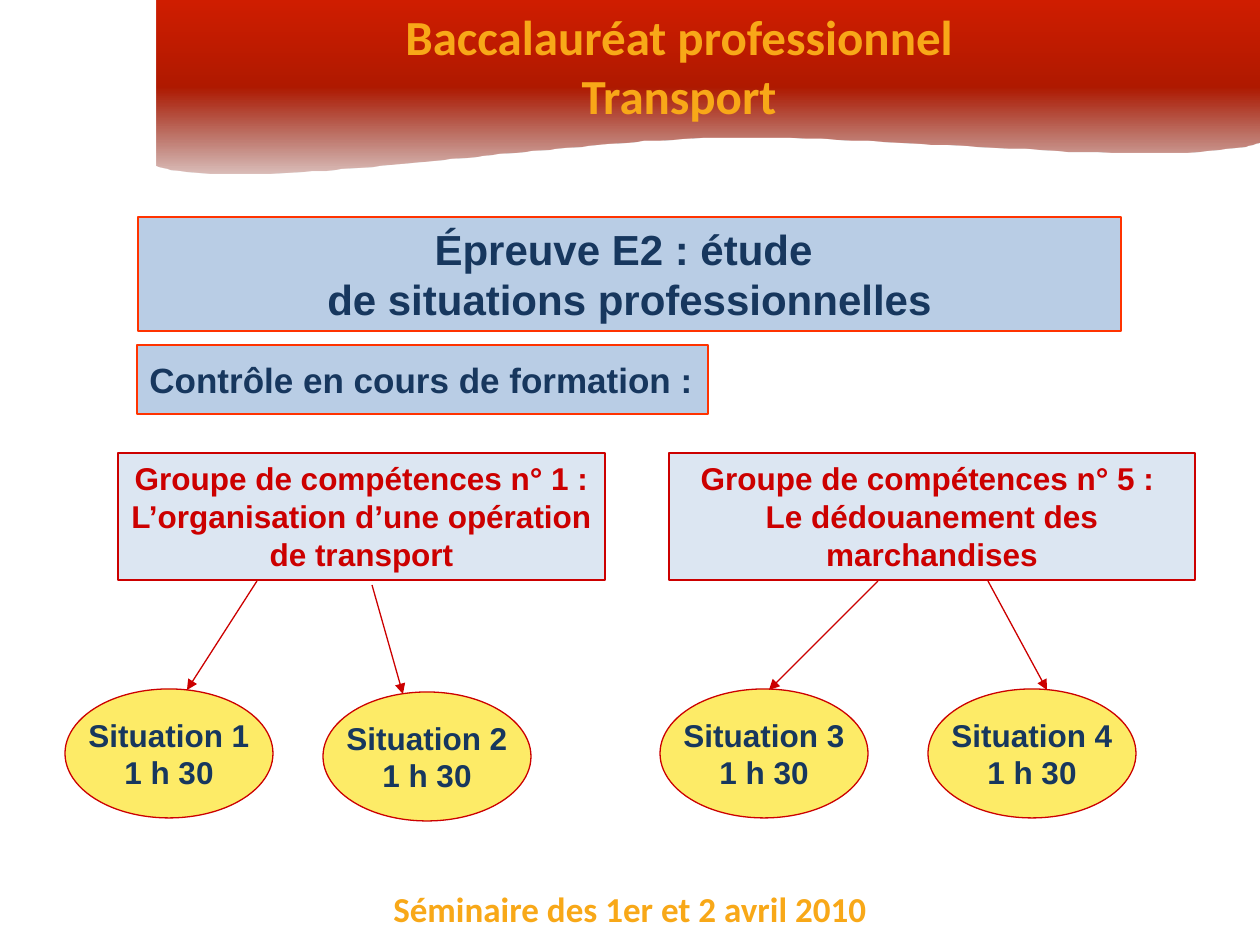
from lxml import etree
from pptx import Presentation
from pptx import util as u
from pptx.dml.color import RGBColor
from pptx.enum import shapes, text
from pptx.oxml import parse_xml
from pptx.oxml.ns import nsdecls, qn

PX = 914400 / 126
COLORS = {
    "orange": "F8A818", "navy": "17375E", "red": "CC0000", "vermilion": "FF3300",
    "blue": "B9CDE5", "pale_blue": "DCE6F2", "yellow": "FDEB67",
}


def px(*lengths):
    return [u.Emu(round(length * PX)) for length in lengths]


def write(shape, lines, size, color, font="Arial", align="CENTER", anchor="MIDDLE", wrap=False):
    frame = shape.text_frame
    frame.text = "\n".join(lines)
    frame_format = {
        "auto_size": text.MSO_AUTO_SIZE.NONE, "word_wrap": wrap,
        "vertical_anchor": text.MSO_ANCHOR[anchor],
    }
    font_format = {"name": font, "size": u.Pt(size), "bold": True}
    for name, value in frame_format.items():
        setattr(frame, name, value)
    for paragraph in frame.paragraphs:
        paragraph.alignment = text.PP_ALIGN[align]
        for name, value in font_format.items():
            setattr(paragraph.font, name, value)
        paragraph.font.color.rgb = RGBColor.from_string(COLORS[color])


presentation = Presentation()
presentation.slide_width, presentation.slide_height = px(1260, 945)
slide = presentation.slides.add_slide(presentation.slide_layouts[5])

# Banner with a wavy lower edge, sampled from two Bézier curves
curves = [
    [(1260, 142), (1171, 169), (902, 134), (718, 137)],
    [(718, 137), (534, 141), (251, 193), (157, 165)],
]
steps = 40
edge = [(1260, 0), (1260, 142)]
for curve in curves:
    for step in range(1, steps + 1):
        t = step / steps
        weights = [(1 - t) ** 3, 3 * t * (1 - t) ** 2, 3 * t ** 2 * (1 - t), t ** 3]
        edge.append(tuple(sum(w * point[axis] for w, point in zip(weights, curve)) for axis in (0, 1)))
builder = slide.shapes.build_freeform(157, 0, scale=PX)
builder.add_line_segments(edge, close=True)
banner = builder.convert_to_shape()
banner.shadow.inherit = False
banner.line.fill.background()
banner.fill.gradient()
banner.fill.gradient_angle = 90
stops = banner.element.spPr.find(qn("a:gradFill")).find(qn("a:gsLst"))
for stop in list(stops):
    stops.remove(stop)
for position, color, alpha in [(0, "7B1100", 27), (50, "AF1900", 100), (100, "D01D00", 100)]:
    stops.append(parse_xml(
        f'<a:gs {nsdecls("a")} pos="{position * 1000}"><a:srgbClr val="{color}">'
        f'<a:alpha val="{alpha * 1000}"/></a:srgbClr></a:gs>'))

title = slide.shapes.title
title.element.addprevious(banner.element)
title.left, title.top, title.width, title.height = px(364, 0, 630, 131)
write(title, ["Baccalauréat professionnel", "Transport"], 28, "orange", "Calibri", anchor="TOP", wrap=True)

footer = slide.shapes.add_textbox(*px(315, 881, 630, 55))
write(footer, ["Séminaire des 1er et 2 avril 2010"], 20, "orange", "Calibri", anchor="TOP", wrap=True)

# Boxes and ellipses: preset, position, fill, line, lines of text, text format
heading = {"size": 24, "color": "navy"}
subheading = {"size": 20, "color": "navy", "align": "LEFT"}
group = {"size": 18, "color": "red", "anchor": "TOP", "wrap": True}
situation = {"size": 18, "color": "navy"}
items = [
    ("RECTANGLE", (138, 217, 983, 114), "blue", "vermilion",
     ["Épreuve E2 : étude ", "de situations professionnelles"], heading),
    ("RECTANGLE", (137, 345, 571, 69), "blue", "vermilion",
     ["Contrôle en cours de formation :"], subheading),
    ("RECTANGLE", (118, 453, 487, 127), "pale_blue", "red",
     ["Groupe de compétences n° 1 : L’organisation d’une opération de transport"], group),
    ("RECTANGLE", (669, 453, 526, 127), "pale_blue", "red",
     ["Groupe de compétences n° 5 : \vLe dédouanement des marchandises"], group),
]
for number, (left, top) in enumerate([(65, 689), (323, 692), (660, 689), (928, 689)], start=1):
    items.append(("OVAL", (left, top, 208, 129), "yellow", "red",
                  [f"Situation {number}", "1 h 30"], situation))

for preset, box, fill, line, lines, text_format in items:
    shape = slide.shapes.add_shape(shapes.MSO_SHAPE[preset], *px(*box))
    shape.shadow.inherit = False
    shape.fill.solid()
    shape.fill.fore_color.rgb = RGBColor.from_string(COLORS[fill])
    shape.line.color.rgb = RGBColor.from_string(COLORS[line])
    shape.line.width = u.Pt(0.75)
    write(shape, lines, **text_format)

# Arrows from each group to its situations
for ends in [(257, 581, 187, 690), (372, 585, 403, 694), (878, 581, 769, 690), (988, 581, 1047, 690)]:
    arrow = slide.shapes.add_connector(shapes.MSO_CONNECTOR.STRAIGHT, *px(*ends))
    arrow.line.color.rgb = RGBColor.from_string(COLORS["red"])
    arrow.line.width = u.Pt(0.75)
    etree.SubElement(arrow.line._get_or_add_ln(), qn("a:tailEnd"), type="triangle")
    etree.SubElement(arrow.element.spPr, qn("a:effectLst"))

presentation.save("out.pptx")
